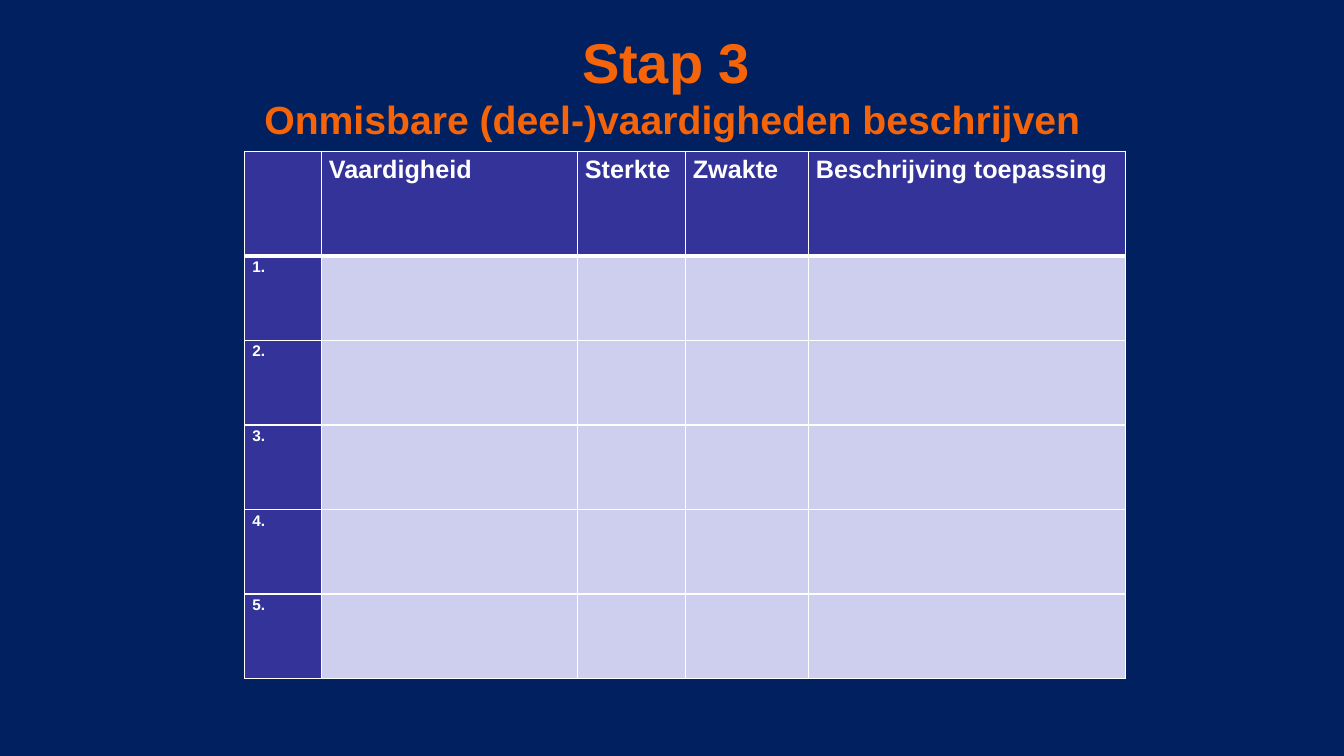
from lxml import etree
from pptx import Presentation
from pptx import util as u
from pptx.dml.color import RGBColor
from pptx.enum import text
from pptx.oxml import ns

NAVY, ORANGE, WHITE = "002060", "F6640A", "FFFFFF"
INDIGO, LILAC = "333399", "CECEEF"
HEADS = ["", "Vaardigheid", "Sterkte", "Zwakte", "Beschrijving toepassing"]
WIDTHS = [1.93, 6.45, 2.72, 3.1, 8]
STEPS = 5
HEAD_H, ROW_H = 2.64, 2.13


def paint(fill, hue):
    fill.solid()
    fill.fore_color.rgb = RGBColor.from_string(hue)


def style(para, size, hue):
    font = para.font
    font.name, font.size, font.bold = "Arial", u.Pt(size), True
    font.color.rgb = RGBColor.from_string(hue)


def edge(cell, side, points):
    """Draw one white cell border; side is L, R, T or B."""
    props = cell._tc.get_or_add_tcPr()
    line = etree.SubElement(props, ns.qn("a:ln" + side), w=str(u.Pt(points)))
    fill = etree.SubElement(line, ns.qn("a:solidFill"))
    etree.SubElement(fill, ns.qn("a:srgbClr"), val=WHITE)


def add_title(slide):
    title = slide.shapes.title
    title.left, title.top = u.Cm(5.51), u.Cm(0.76)
    title.width, title.height = u.Cm(22.86), u.Cm(2.77)
    frame = title.text_frame
    frame.word_wrap = True
    frame.auto_size = text.MSO_AUTO_SIZE.NONE
    frame.vertical_anchor = text.MSO_ANCHOR.MIDDLE
    para = frame.paragraphs[0]
    para.alignment = text.PP_ALIGN.CENTER
    style(para, 32, ORANGE)
    head = para.add_run()
    head.text, head.font.size = "Stap 3", u.Pt(40)
    para.add_run().text = " "
    para.add_line_break()
    sub = para.add_run()
    sub.text = "Onmisbare (deel-)vaardigheden beschrijven"
    sub.font.size = u.Pt(28)


def fill_cell(cell, words, row, col):
    head = row == 0
    for side in "LRTB":
        thick = (head and side == "B") or (row == 1 and side == "T")
        edge(cell, side, 3 if thick else 1)
    paint(cell.fill, INDIGO if head or col == 0 else LILAC)
    if words:
        cell.margin_left = cell.margin_right = u.Cm(0.19)
        cell.margin_top = cell.margin_bottom = 0
        para = cell.text_frame.paragraphs[0]
        para.text, para.line_spacing = words, 1.15
        style(para, 18 if head else 11, WHITE)


def add_grid(slide):
    rows = [HEADS] + [[f"{n}."] + [""] * 4 for n in range(1, STEPS + 1)]
    frame = slide.shapes.add_table(
        len(rows), len(HEADS), u.Cm(6.17), u.Cm(3.81),
        u.Cm(sum(WIDTHS)), u.Cm(HEAD_H + STEPS * ROW_H))
    table = frame.table
    table.first_col, table.horz_banding = True, False
    for col, width in zip(table.columns, WIDTHS):
        col.width = u.Cm(width)
    for r, cells in enumerate(rows):
        table.rows[r].height = u.Cm(ROW_H if r else HEAD_H)
        for c, words in enumerate(cells):
            fill_cell(table.cell(r, c), words, r, c)


def main():
    deck = Presentation()
    deck.slide_width, deck.slide_height = u.Cm(33.87), u.Cm(19.05)
    slide = deck.slides.add_slide(deck.slide_layouts[5])
    paint(slide.background.fill, NAVY)
    add_title(slide)
    add_grid(slide)
    deck.save("out.pptx")


if __name__ == "__main__":
    main()
